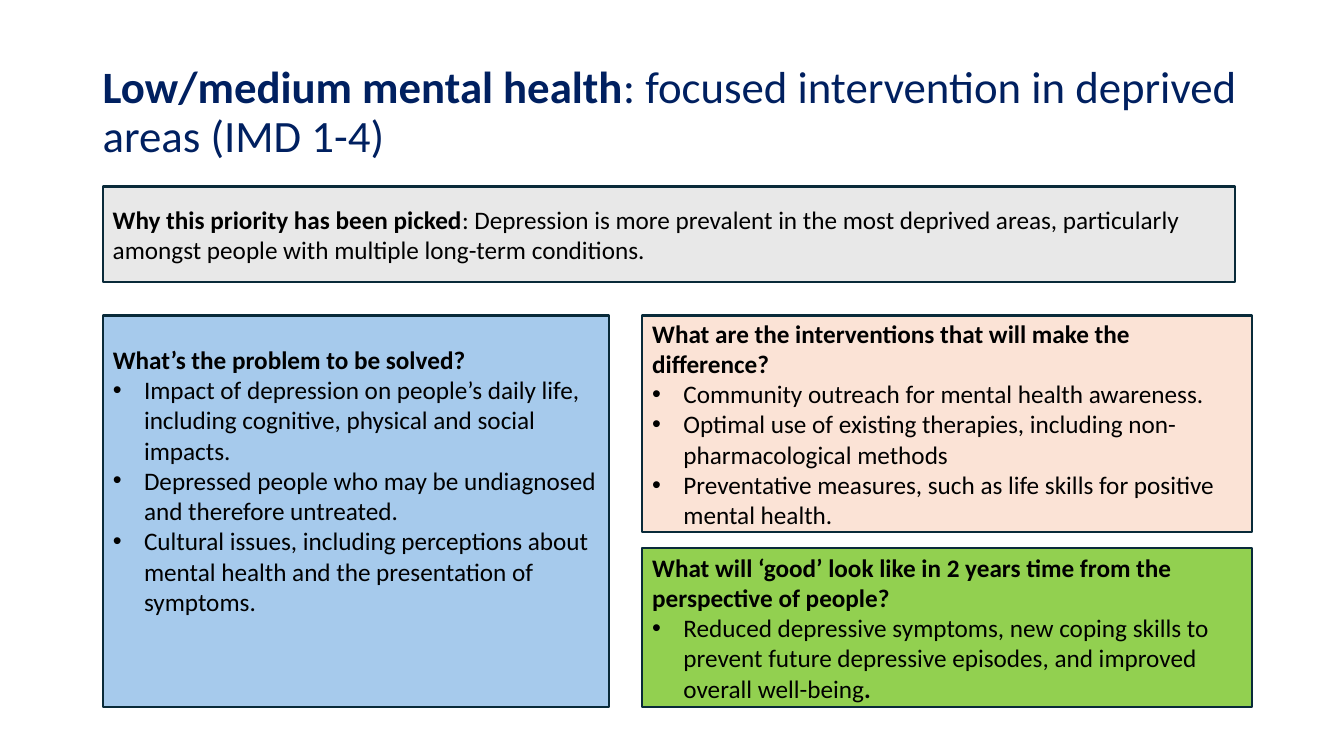
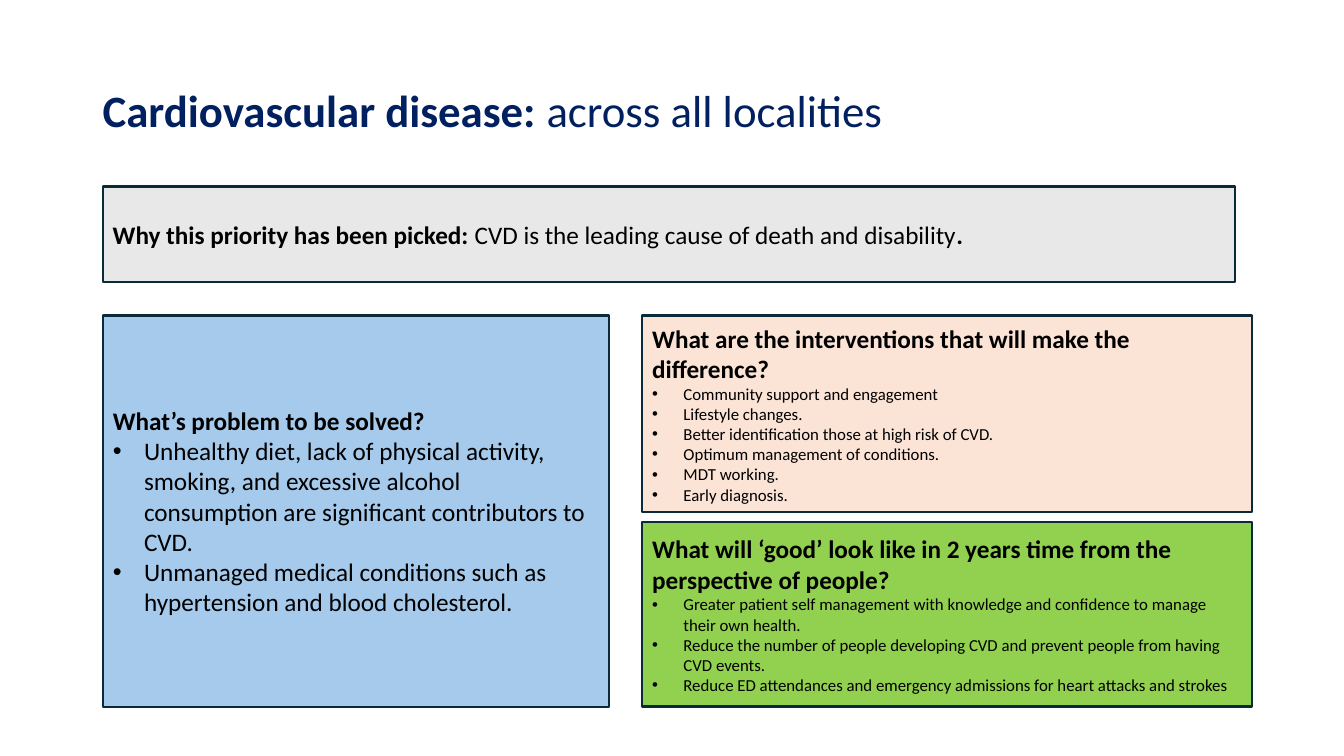
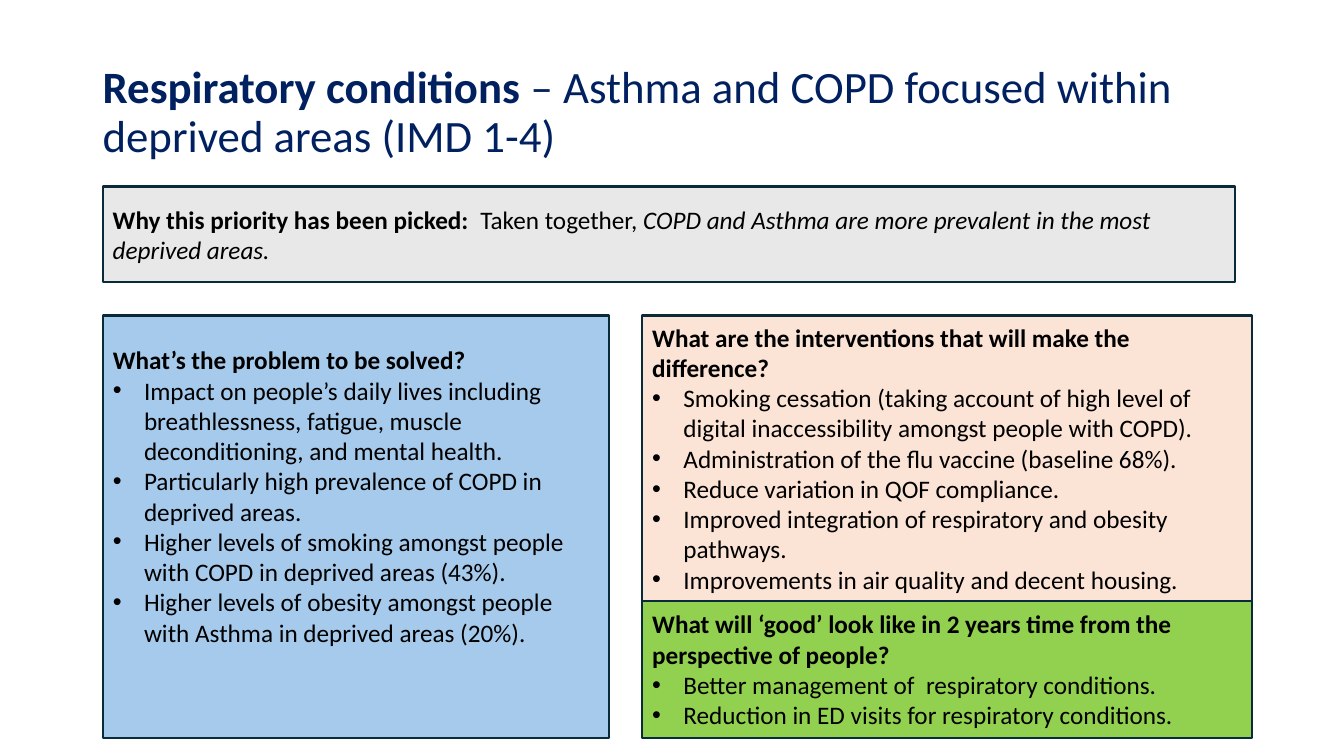
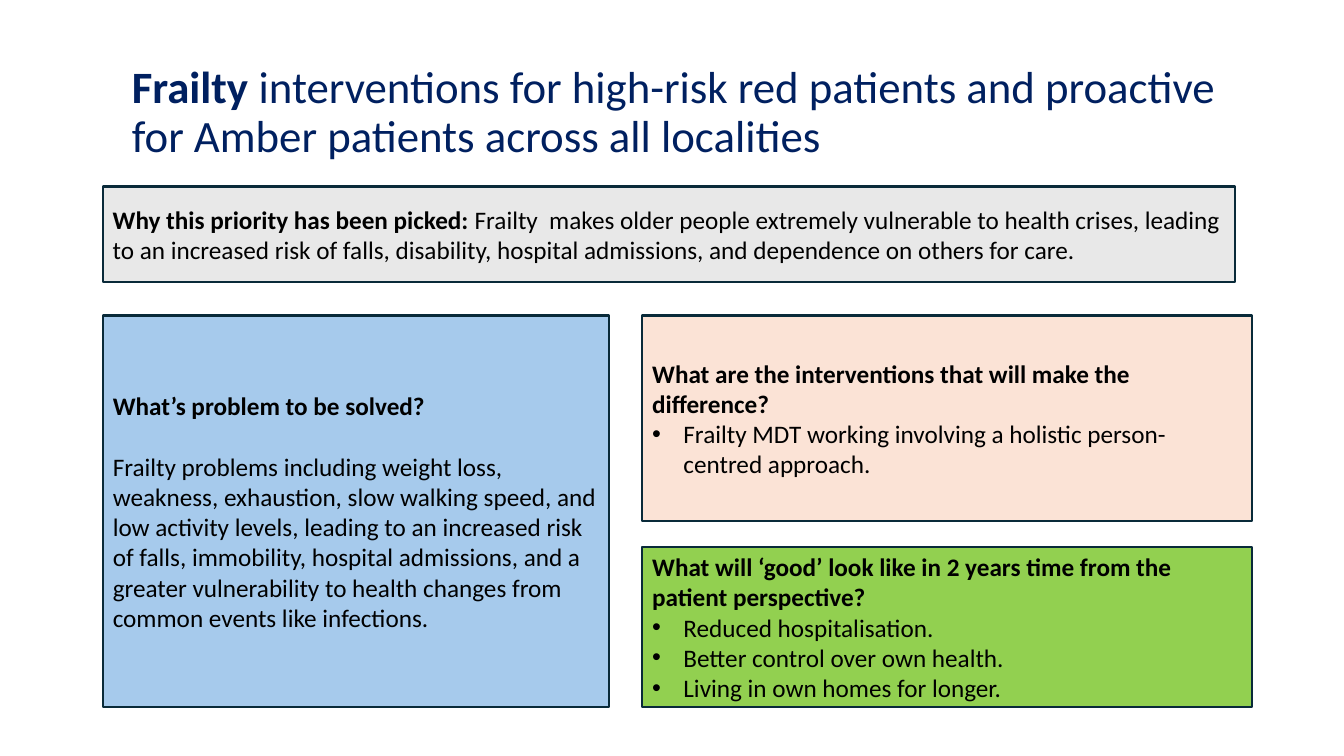
"""Build four slides that set out health priorities in panels."""
from lxml import etree
from pptx import Presentation
from pptx.dml.color import RGBColor
from pptx.enum.shapes import MSO_SHAPE
from pptx.enum.text import MSO_ANCHOR, PP_ALIGN
from pptx.oxml.ns import qn
from pptx.util import Emu, Pt

RECT = MSO_SHAPE.RECTANGLE
MIDDLE = MSO_ANCHOR.MIDDLE
LEFT = PP_ALIGN.LEFT
SCALE = 9144
FONT = "Calibri"
COLORS = {
    "navy": "002060",
    "ink": "000000",
    "edge": "092A39",
    "grey": "E8E8E8",
    "blue": "A6CAEC",
    "peach": "FBE3D6",
    "green": "92D050",
}
TOP = 313
SIDE = 102
RIGHT = 637
WHY = "Why this priority has been picked"
PROBLEM = "What’s the problem to be solved?"
ISSUE = "What’s problem to be solved?"
ACTION = "What are the interventions that will make the difference?"
GOOD = "What will ‘good’ look like in 2 years time from the perspective of people?"


def px(count):
    return Emu(count * SCALE)


def tint(name):
    return RGBColor.from_string(COLORS[name])


def put(para, text, size=18, color="ink", bold=False, italic=False):
    run = para.add_run()
    run.text = text
    font = run.font
    font.name = FONT
    font.size = Pt(size)
    font.bold = bold
    font.italic = italic
    font.color.rgb = tint(color)


class Deck:
    def __init__(self):
        self.file = Presentation()
        self.file.slide_width = px(1333)
        self.file.slide_height = px(750)
        self.slide = None

    def page(self):
        self.slide = self.file.slides.add_slide(self.file.slide_layouts[6])

    def title(self, lead, rest, indent=0):
        box = self.slide.shapes.add_textbox(px(92), px(40), px(1150), px(145))
        frame = box.text_frame
        frame.word_wrap = True
        frame.vertical_anchor = MIDDLE
        para = frame.paragraphs[0]
        para.line_spacing = 0.9
        if indent:
            para._p.get_or_add_pPr().set("marL", str(px(indent)))
        put(para, lead, size=32, color="navy", bold=True)
        put(para, rest, size=32, color="navy")

    def panel(self, x, y, wide, high, fill, pad=5):
        box = self.slide.shapes.add_shape(RECT, px(x), px(y), px(wide), px(high))
        box.shadow.inherit = False
        box.fill.solid()
        box.fill.fore_color.rgb = tint(fill)
        box.line.color.rgb = tint("edge")
        box.line.width = Pt(1.5)
        frame = box.text_frame
        frame.word_wrap = True
        frame.vertical_anchor = MIDDLE
        frame.margin_bottom = px(pad)
        frame.paragraphs[0].alignment = LEFT
        return frame

    def reason(self, lead, rest, tail="", **style):
        para = self.panel(SIDE, 185, 1123, 95, "grey").paragraphs[0]
        put(para, lead, bold=True)
        put(para, rest)
        if tail:
            put(para, tail, **style)

    def bullet(self, para):
        props = para._p.get_or_add_pPr()
        props.set("marL", str(px(31)))
        props.set("indent", str(px(-31)))
        etree.SubElement(props, qn("a:buFont")).set("typeface", "Arial")
        etree.SubElement(props, qn("a:buChar")).set("char", "•")

    def card(self, place, fill, head, items, size=18, pad=5, plain=False, stop=""):
        frame = self.panel(*place, fill, pad)
        put(frame.paragraphs[0], head, bold=True)
        for item in items:
            para = frame.add_paragraph()
            para.alignment = LEFT
            if plain:
                para.space_before = Pt(22)
            else:
                self.bullet(para)
            put(para, item, size=size)
        if stop:
            put(para, stop, size=size, bold=True)

    def cards(self, left, action, good, high, gap, foot=701, size=18):
        low = TOP + high + gap
        self.card((SIDE, TOP, 502, foot - TOP), "blue", **left)
        self.card((RIGHT, TOP, 605, high), "peach", ACTION, action, size)
        self.card((RIGHT, low, 605, foot - low), "green", size=size, **good)


def main():
    deck = Deck()

    deck.page()
    deck.title("Low/medium mental health",
               ": focused intervention in deprived areas (IMD 1-4)")
    deck.reason(WHY, ": Depression is more prevalent in the most deprived areas, "
                "particularly amongst people with multiple long-term conditions.")
    deck.cards(
        dict(head=PROBLEM, pad=66, items=[
            "Impact of depression on people’s daily life, including cognitive, "
            "physical and social impacts.",
            "Depressed people who may be undiagnosed and therefore untreated.",
            "Cultural issues, including perceptions about mental health and the "
            "presentation of symptoms.",
        ]),
        [
            "Community outreach for mental health awareness.",
            "Optimal use of existing therapies, including non-pharmacological methods",
            "Preventative measures, such as life skills for positive mental health.",
        ],
        dict(head=GOOD, stop=".", items=[
            "Reduced depressive symptoms, new coping skills to prevent future "
            "depressive episodes, and improved overall well-being",
        ]),
        high=215, gap=16)

    deck.page()
    deck.title("Cardiovascular disease: ", "across all localities")
    deck.reason(WHY + ": ", "CVD is the leading cause of death and disability",
                ".", bold=True)
    deck.cards(
        dict(head=ISSUE, items=[
            "Unhealthy diet, lack of physical activity, smoking, and excessive "
            "alcohol consumption are significant contributors to CVD.",
            "Unmanaged medical conditions such as hypertension and blood cholesterol.",
        ]),
        [
            "Community support and engagement",
            "Lifestyle changes.",
            "Better identification those at high risk of CVD.",
            "Optimum management of conditions.",
            "MDT working.",
            "Early diagnosis.",
        ],
        dict(head=GOOD, items=[
            "Greater patient self management with knowledge and confidence to "
            "manage their own health.",
            "Reduce the number of people developing CVD and prevent people from "
            "having CVD events.",
            "Reduce ED attendances and emergency admissions for heart attacks "
            "and strokes",
        ]),
        high=195, gap=10, size=12)

    deck.page()
    deck.title("Respiratory conditions",
               " – Asthma and COPD focused within deprived areas (IMD 1-4)")
    deck.reason(WHY + ": ", " Taken together, ",
                "COPD and Asthma are more prevalent in the most deprived areas.",
                italic=True)
    deck.cards(
        dict(head=PROBLEM, pad=66, items=[
            "Impact on people’s daily lives including breathlessness, fatigue, "
            "muscle deconditioning, and mental health.",
            "Particularly high prevalence of COPD in deprived areas.",
            "Higher levels of smoking amongst people with COPD in deprived areas (43%).",
            "Higher levels of obesity amongst people with Asthma in deprived "
            "areas (20%).",
        ]),
        [
            "Smoking cessation (taking account of high level of digital "
            "inaccessibility amongst people with COPD).",
            "Administration of the flu vaccine (baseline 68%).",
            "Reduce variation in QOF compliance.",
            "Improved integration of respiratory and obesity pathways.",
            "Improvements in air quality and decent housing.",
        ],
        dict(head=GOOD, items=[
            "Better management of  respiratory conditions.",
            "Reduction in ED visits for respiratory conditions.",
        ]),
        high=283, gap=0, foot=732)

    deck.page()
    deck.title("Frailty", " interventions for high-risk red patients and proactive "
               "for Amber patients across all localities", indent=29)
    deck.reason(WHY + ": ", "Frailty  makes older people extremely vulnerable to "
                "health crises, leading to an increased risk of falls, disability, "
                "hospital admissions, and dependence on others for care.")
    deck.cards(
        dict(head=ISSUE, plain=True, items=[
            "Frailty problems including weight loss, weakness, exhaustion, slow "
            "walking speed, and low activity levels, leading to an increased risk "
            "of falls, immobility, hospital admissions, and a greater vulnerability "
            "to health changes from common events like infections.",
        ]),
        ["Frailty MDT working involving a holistic person-centred approach."],
        dict(head="What will ‘good’ look like in 2 years time from the patient "
             "perspective?", items=[
                 "Reduced hospitalisation.",
                 "Better control over own health.",
                 "Living in own homes for longer.",
             ]),
        high=204, gap=26)

    deck.file.save("out.pptx")


if __name__ == "__main__":
    main()
